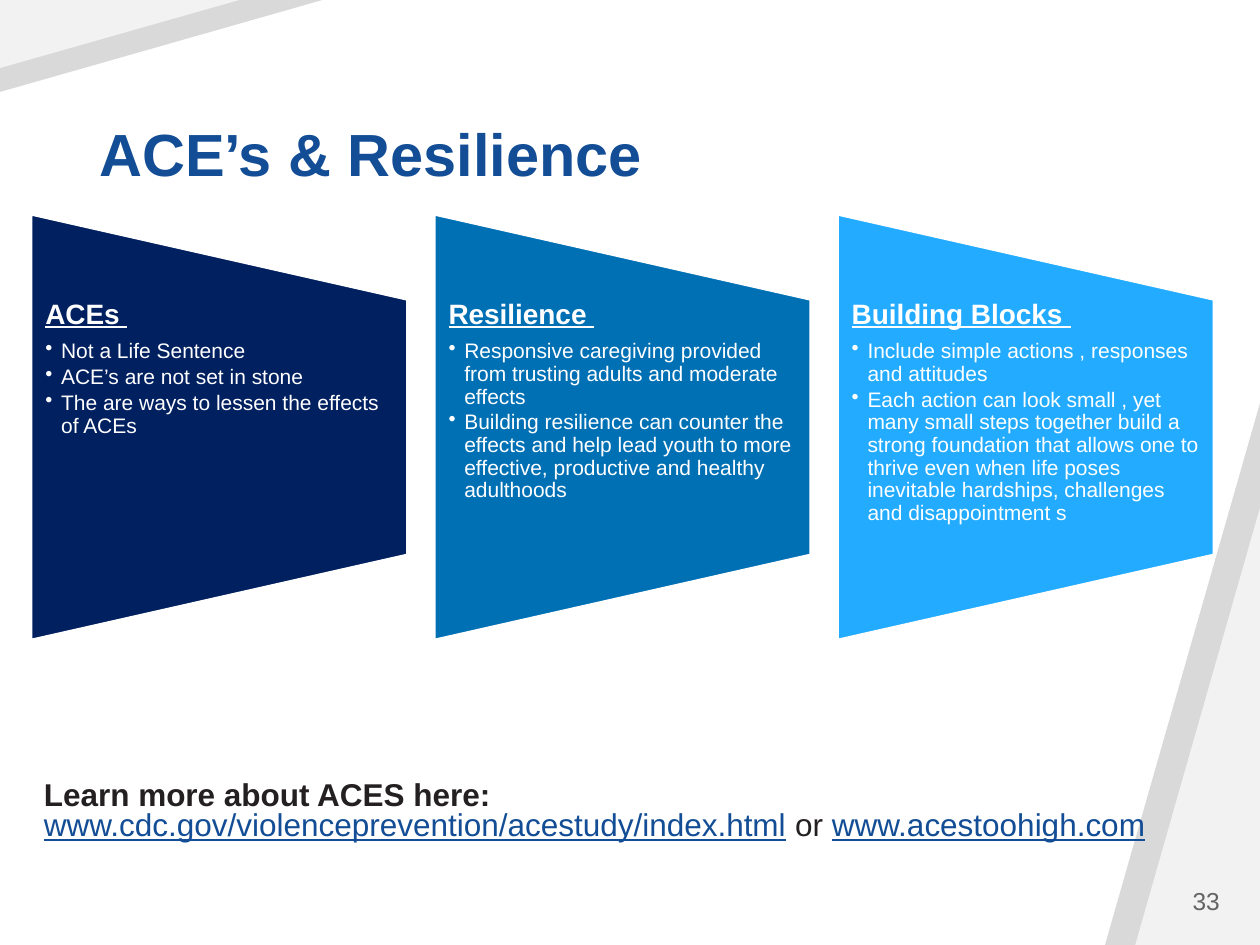
"""Builds the ACE's and resilience slide with three tapered panels."""
import pptx
import pptx.dml.color
import pptx.enum.shapes
import pptx.enum.text
import pptx.util
from lxml import etree

COLORS = {
    "band": "D9D9D9", "corner": "F2F2F2", "white": "FFFFFF",
    "title": "124D95", "body": "242021", "number": "646464",
    "navy": "002060", "blue": "0070B5", "sky": "23ACFF",
}

PANELS = [
    ("navy", "ACEs ", [
        "Not a Life Sentence",
        "ACE’s are not set in stone",
        "The are ways to lessen the effects of ACEs",
    ]),
    ("blue", "Resilience ", [
        "Responsive caregiving provided from trusting adults and moderate effects",
        "Building resilience can counter the effects and help lead youth to more "
        "effective, productive and healthy adulthoods",
    ]),
    ("sky", "Building Blocks ", [
        "Include simple actions , responses and attitudes",
        "Each action can look small , yet many small steps together build a strong "
        "foundation that allows one to thrive even when life poses inevitable "
        "hardships, challenges and disappointment s",
    ]),
]


class SlideBuilder:
    """Holds the style and the current slide, laid out on a 100 by 75 grid."""

    def __init__(self, deck, font="Arial"):
        self.cell = deck.slide_width / 100
        self.font = font
        self.slide = deck.slides.add_slide(deck.slide_layouts[6])

    def span(self, *cells):
        return [pptx.util.Emu(round(cell * self.cell)) for cell in cells]

    def color(self, name):
        return pptx.dml.color.RGBColor.from_string(COLORS[name])

    def shape(self, kind, area, fill, rotation=0, outline=None):
        figure = self.slide.shapes.add_shape(kind, *self.span(*area))
        figure.shadow.inherit = False
        figure.rotation = rotation
        figure.fill.solid()
        figure.fill.fore_color.rgb = self.color(fill)
        if outline:
            figure.line.color.rgb = self.color(outline)
            figure.line.width = pptx.util.Pt(1)
        else:
            figure.line.fill.background()
        return figure

    def wedge(self, area, fill, apex, rotation=0):
        kind = pptx.enum.shapes.MSO_SHAPE.ISOSCELES_TRIANGLE
        self.shape(kind, area, fill, rotation).adjustments[0] = apex

    def frame(self, area, anchor="TOP", insets=(1, 0.5)):
        frame = self.slide.shapes.add_textbox(*self.span(*area)).text_frame
        frame.word_wrap = True
        frame.vertical_anchor = pptx.enum.text.MSO_ANCHOR[anchor]
        side, edge = self.span(*insets)
        frame.margin_left = frame.margin_right = side
        frame.margin_top = frame.margin_bottom = edge
        return frame

    def run(self, paragraph, words, size, color, bold=False, underline=False):
        run = paragraph.add_run()
        run.text = words
        run.font.name = self.font
        run.font.size = pptx.util.Pt(size)
        run.font.bold = bold
        run.font.underline = underline
        run.font.color.rgb = self.color(color)

    def text(self, area, words, size, color, bold=False, anchor="TOP",
             align="LEFT", spacing=1.0):
        paragraph = self.frame(area, anchor).paragraphs[0]
        paragraph.alignment = pptx.enum.text.PP_ALIGN[align]
        paragraph.line_spacing = spacing
        self.run(paragraph, words, size, color, bold)

    def bullet(self, paragraph):
        paragraph.level = 1
        properties = paragraph._p.get_or_add_pPr()
        (indent,) = self.span(1.25)
        properties.set("marL", str(indent))
        properties.set("indent", str(-indent))
        mark = etree.SubElement(properties, pptx.oxml.ns.qn("a:buChar"))
        mark.set("char", "•")

    def panel(self, left, fill, heading, points):
        width, height, top = 29.8, 33.7, 17.05
        shift = (height - width) / 2
        self.shape(pptx.enum.shapes.MSO_SHAPE.FLOWCHART_MANUAL_OPERATION,
                   (left - shift, top + shift, height, width),
                   fill, 270, "white")
        frame = self.frame((left, 23.8, width, 20.2), insets=(1.1, 0))
        title = frame.paragraphs[0]
        title.line_spacing = 0.9
        title.space_after = pptx.util.Pt(6)
        self.run(title, heading, 16, "white", bold=True, underline=True)
        for point in points:
            item = frame.add_paragraph()
            item.line_spacing = 0.9
            item.space_after = pptx.util.Pt(1.8)
            self.bullet(item)
            self.run(item, point, 12, "white")

    def links(self, area, first, second):
        paragraph = self.frame(area).paragraphs[0]
        self.run(paragraph, first, 18, "title", underline=True)
        self.run(paragraph, " or ", 18, "body")
        self.run(paragraph, second, 18, "title", underline=True)


def main():
    deck = pptx.Presentation()
    deck.slide_width = pptx.util.Inches(10)
    deck.slide_height = pptx.util.Inches(7.5)
    page = SlideBuilder(deck)

    for fill, width, height in (("band", 12.3, 43), ("corner", 9.9, 34.7)):
        page.wedge((100 - width, 75 - height, width, height), fill, 1)
    for fill, width, height in (("band", 7.3, 25.6), ("corner", 5.4, 19)):
        shift = (height - width) / 2
        page.wedge((shift, -shift, width, height), fill, 0, 90)

    page.text((6.9, 4, 87, 11.5), "ACE’s & Resilience", 34, "title",
              bold=True, anchor="BOTTOM", spacing=0.9)
    for column, (fill, heading, points) in enumerate(PANELS):
        page.panel(2.5 + 32 * column, fill, heading, points)
    page.links((2.5, 63.4, 92.8, 4),
               "www.cdc.gov/violenceprevention/acestudy/index.html",
               "www.acestoohigh.com")
    page.text((2.5, 61, 50.4, 4), "Learn more about ACES here:", 18, "body",
              bold=True)
    page.text((89.6, 69.5, 8.2, 4), "33", 14, "number",
              anchor="MIDDLE", align="RIGHT")
    deck.save("out.pptx")


if __name__ == "__main__":
    main()
